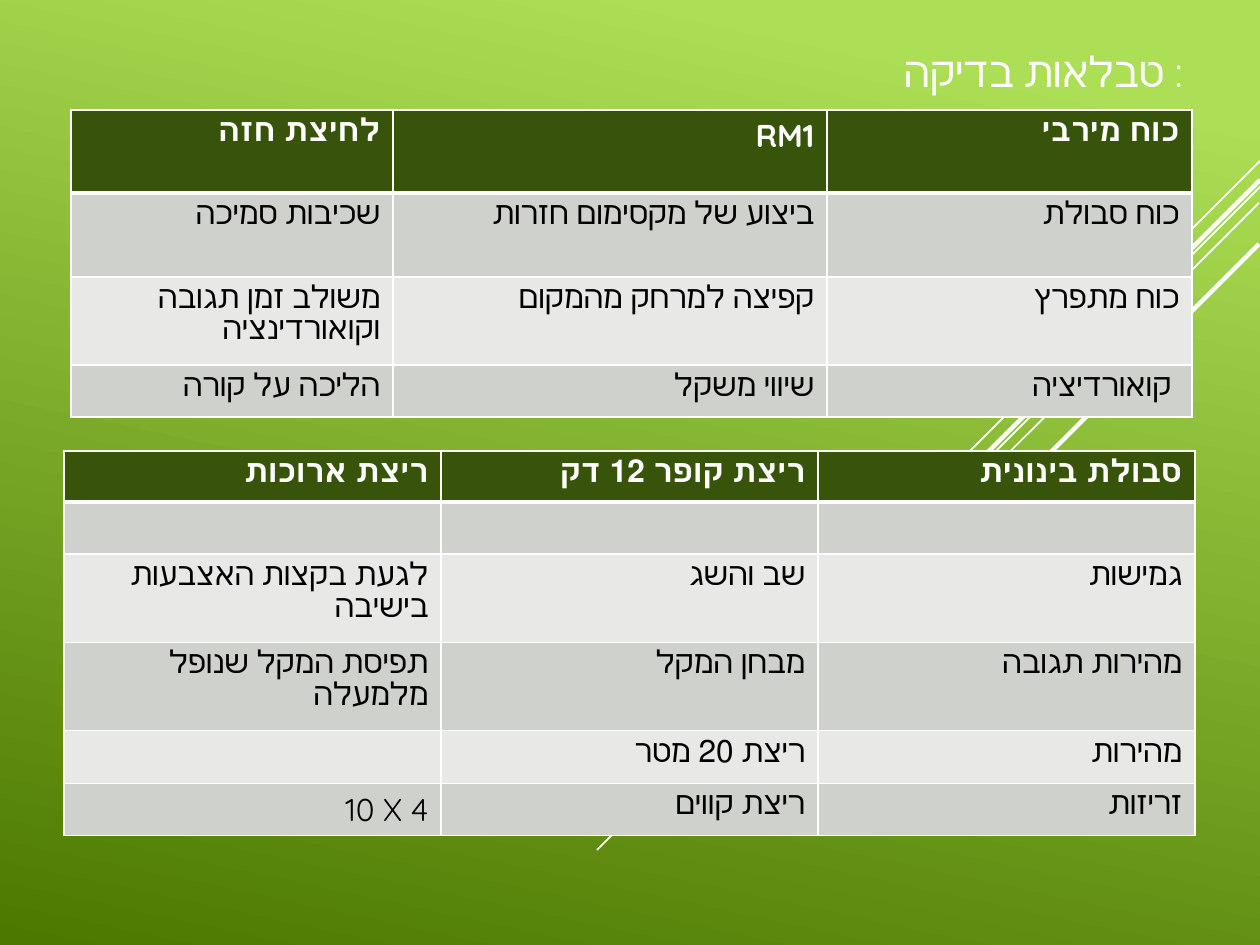
import lxml.etree
import pptx
import pptx.dml.color
import pptx.enum.shapes
import pptx.enum.text
import pptx.oxml.ns
import pptx.util

RGBColor = pptx.dml.color.RGBColor
WHITE = RGBColor(0xFF, 0xFF, 0xFF)
BLACK = RGBColor(0, 0, 0)
LIME = RGBColor(0xAC, 0xDF, 0x55)
FOREST = RGBColor(0x4C, 0x78, 0x00)
HEADER = RGBColor(0x38, 0x54, 0x0A)
BANDS = (RGBColor(0xE8, 0xE9, 0xE7), RGBColor(0xCE, 0xD1, 0xCC))
FONT = "Quicksand"
EMU_PER_PX = 914400 / 126

STREAKS = [
    ((1260, 161), (828, 593), 1),
    ((1261, 186), (597, 850), 1),
    ((1259, 203), (719, 742), 1),
    ((1260, 180), (731, 709), 2.5),
    ((1259, 244), (786, 717), 2.5),
]
STRENGTH_TESTS = [
    ("לחיצת חזה", "RM1", "כוח מירבי"),
    ("שכיבות סמיכה", "ביצוע של מקסימום חזרות", "כוח סבולת"),
    ("משולב זמן תגובה וקואורדינציה", "קפיצה למרחק מהמקום", "כוח מתפרץ"),
    ("הליכה על קורה", "שיווי משקל", "קואורדיציה "),
]
FITNESS_TESTS = [
    ("ריצת ארוכות", "ריצת קופר 12 דק", "סבולת בינונית"),
    ("", "", ""),
    ("לגעת בקצות האצבעות בישיבה", "שב והשג", "גמישות"),
    ("תפיסת המקל שנופל מלמעלה", "מבחן המקל", "מהירות תגובה"),
    ("", "ריצת 20 מטר", "מהירות"),
    ("10 X 4", "ריצת קווים", "זריזות"),
]


def px(length):
    return pptx.util.Emu(round(length * EMU_PER_PX))


class SlideBuilder:
    def __init__(self, slide):
        self.slide = slide

    def background(self):
        fill = self.slide.background.fill
        fill.gradient()
        fill.gradient_angle = 258
        for stop, color, position in zip(fill.gradient_stops, (LIME, FOREST), (0.1, 1)):
            stop.color.rgb = color
            stop.position = position

    def line(self, start, end, weight):
        line = self.slide.shapes.add_connector(
            pptx.enum.shapes.MSO_CONNECTOR.STRAIGHT, *map(px, start + end))
        line.line.color.rgb = WHITE
        line.line.width = pptx.util.Pt(weight)
        properties = line._element.spPr
        lxml.etree.SubElement(properties, pptx.oxml.ns.qn("a:effectLst"))

    def text(self, frame, words, size, color, bold=False):
        para = frame.paragraphs[0]
        para.alignment = pptx.enum.text.PP_ALIGN.RIGHT
        if not words:
            para.font.size = pptx.util.Pt(size)
            return
        span = para.add_run()
        span.text = words
        span.font.name = FONT
        span.font.size = pptx.util.Pt(size)
        span.font.bold = bold
        span.font.color.rgb = color

    def title(self, words, left, top, width, height):
        box = self.slide.shapes.add_textbox(*map(px, (left, top, width, height)))
        frame = box.text_frame
        frame.word_wrap = True
        frame.vertical_anchor = pptx.enum.text.MSO_ANCHOR.BOTTOM
        self.text(frame, words, 24, WHITE)

    def borders(self, cell, top, bottom):
        properties = cell._tc.get_or_add_tcPr()
        weights = {"lnL": 1, "lnR": 1, "lnT": top, "lnB": bottom}
        for index, (side, weight) in enumerate(weights.items()):
            edge = lxml.etree.Element(
                pptx.oxml.ns.qn(f"a:{side}"), w=str(pptx.util.Pt(weight)))
            fill = lxml.etree.SubElement(edge, pptx.oxml.ns.qn("a:solidFill"))
            lxml.etree.SubElement(fill, pptx.oxml.ns.qn("a:srgbClr"), val=str(WHITE))
            properties.insert(index, edge)

    def table(self, left, top, widths, heights, rows):
        frame = self.slide.shapes.add_table(
            len(heights), len(widths), px(left), px(top), px(sum(widths)), px(sum(heights)))
        table = frame.table
        for column, width in zip(table.columns, widths):
            column.width = px(width)
        for index, (row, height, texts) in enumerate(zip(table.rows, heights, rows)):
            row.height = px(height)
            is_header = index == 0
            for cell, words in zip(row.cells, texts):
                cell.fill.solid()
                cell.fill.fore_color.rgb = HEADER if is_header else BANDS[index % 2]
                self.text(cell.text_frame, words, 18, WHITE if is_header else BLACK, is_header)
                self.borders(cell, 3 if index == 1 else 1, 3 if is_header else 1)


def main():
    deck = pptx.Presentation()
    deck.slide_width, deck.slide_height = px(1260), px(945)
    page = SlideBuilder(deck.slides.add_slide(deck.slide_layouts[6]))
    page.background()
    for start, end, weight in STREAKS:
        page.line(start, end, weight)
    page.title("טבלאות בדיקה :", 64, 42, 1131, 60)
    page.table(71, 110, (322, 434, 365), (83, 84, 75, 52), STRENGTH_TESTS)
    page.table(64, 451, (377, 377, 377), (51, 52, 84, 75, 53, 52), FITNESS_TESTS)
    deck.save("out.pptx")


if __name__ == "__main__":
    main()
